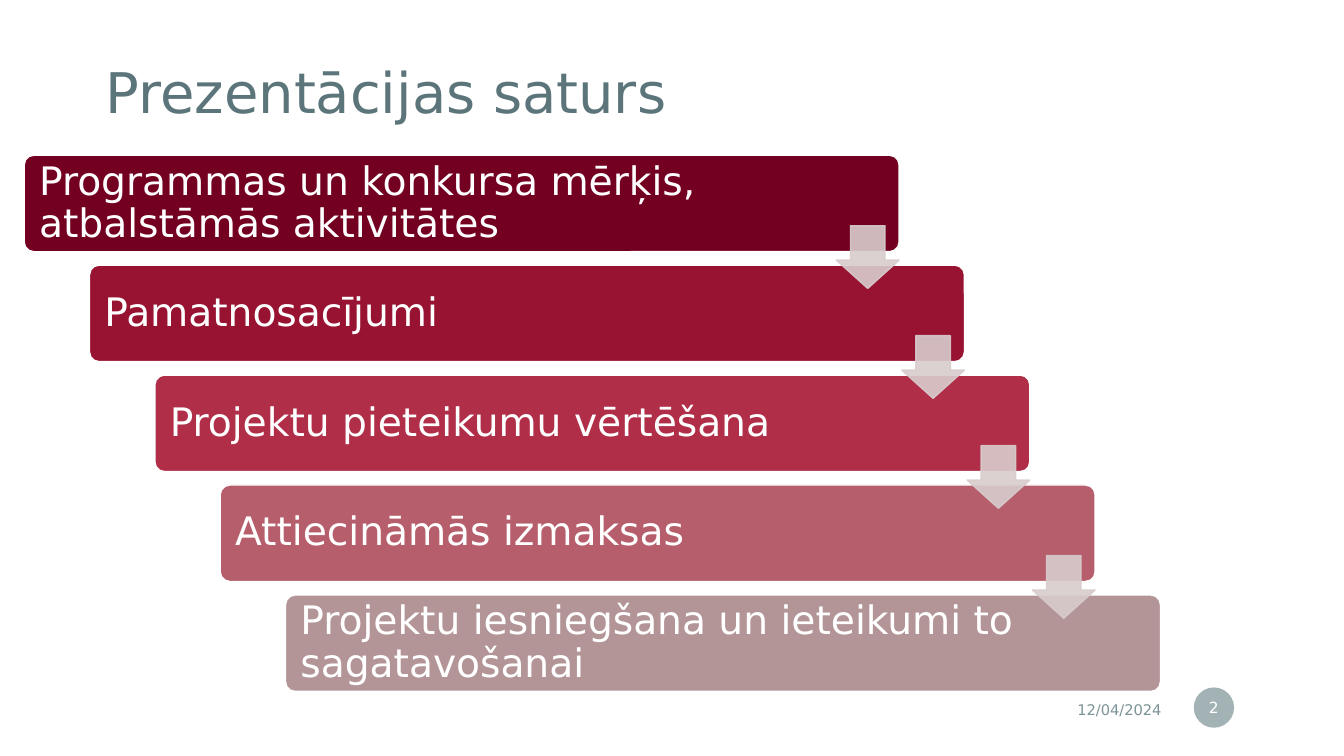
import lxml.etree
import pptx
import pptx.dml.color
import pptx.enum.shapes
import pptx.enum.text
import pptx.oxml.ns
import pptx.util

RGBColor = pptx.dml.color.RGBColor
Shapes = pptx.enum.shapes.MSO_SHAPE
Align = pptx.enum.text.PP_ALIGN
Inches = pptx.util.Inches

WHITE = RGBColor(0xFF, 0xFF, 0xFF)
TITLE_COLOR = RGBColor(0x5B, 0x75, 0x7A)
FOOTER_COLOR = RGBColor(0x7C, 0x93, 0x96)
ARROW_COLOR = RGBColor(0xD8, 0xCC, 0xCD)
FONT = "DejaVu Sans"

STEPS = [
    ("Programmas un konkursa mērķis, atbalstāmās aktivitātes", RGBColor(0x74, 0x00, 0x21)),
    ("Pamatnosacījumi", RGBColor(0x98, 0x12, 0x31)),
    ("Projektu pieteikumu vērtēšana", RGBColor(0xB0, 0x2E, 0x47)),
    ("Attiecināmās izmaksas", RGBColor(0xB6, 0x5E, 0x6B)),
    ("Projektu iesniegšana un ieteikumi to sagatavošanai", RGBColor(0xB3, 0x95, 0x98)),
]


def set_opacity(color_format, percent):
    """Make a solid colour partly transparent."""
    color = color_format._xFill.find(pptx.oxml.ns.qn("a:srgbClr"))
    alpha = lxml.etree.SubElement(color, pptx.oxml.ns.qn("a:alpha"))
    alpha.set("val", str(percent * 1000))


def write_text(shape, text, size, color, align, insets, spacing=1.0):
    """Write one vertically centred paragraph into a shape."""
    frame = shape.text_frame
    frame.word_wrap = True
    frame.auto_size = pptx.enum.text.MSO_AUTO_SIZE.NONE
    frame.vertical_anchor = pptx.enum.text.MSO_ANCHOR.MIDDLE
    frame.margin_left, frame.margin_top, frame.margin_right, frame.margin_bottom = map(Inches, insets)
    para = frame.paragraphs[0]
    para.text = text
    para.alignment = align
    para.line_spacing = spacing
    para.font.name = FONT
    para.font.size = pptx.util.Pt(size)
    para.font.color.rgb = color


def add_filled_shape(page, kind, box, fill, line=None, opacity=100):
    """Add a flat preset shape with a solid fill and an optional outline."""
    shape = page.shapes.add_shape(kind, *map(Inches, box))
    shape.shadow.inherit = False
    fills = [shape.fill]
    if line is None:
        shape.line.fill.background()
    else:
        shape.line.width = pptx.util.Pt(1)
        fills.append(shape.line.fill)
    for part, color in zip(fills, (fill, line)):
        part.solid()
        part.fore_color.rgb = color
        if opacity < 100:
            set_opacity(part.fore_color, opacity)
    return shape


def add_title(page, box):
    """Place the slide title in its placeholder."""
    title = page.shapes.title
    title.left, title.top, title.width, title.height = map(Inches, box)
    write_text(title, "Prezentācijas saturs", 40, TITLE_COLOR, Align.LEFT, [0.2] * 4, 0.9)


def add_staircase(page, box):
    """Draw the stepped bars and the arrows that join them."""
    left, top, width, height = box
    bar_width, bar_height = width * 0.77, height * 0.18
    step_x = (width - bar_width) / (len(STEPS) - 1)
    step_y = (height - bar_height) / (len(STEPS) - 1)
    arrow_size = bar_height * 0.65
    for index, (text, color) in enumerate(STEPS):
        bar_box = (left + index * step_x, top + index * step_y, bar_width, bar_height)
        bar = add_filled_shape(page, Shapes.ROUNDED_RECTANGLE, bar_box, color, WHITE)
        bar.adjustments[0] = 0.1
        write_text(bar, text, 28, WHITE, Align.LEFT, (0.12, 0.03, 1.4, 0.03), 0.9)
    for index in range(len(STEPS) - 1):
        arrow_box = (left + index * step_x + bar_width - arrow_size,
                     top + index * step_y + bar_height * 0.73, arrow_size, arrow_size)
        arrow = add_filled_shape(page, Shapes.DOWN_ARROW, arrow_box, ARROW_COLOR, ARROW_COLOR, 90)
        arrow.adjustments[0] = 0.55
        arrow.adjustments[1] = 0.45


def add_footer(page, box):
    """Place the date and the page number badge at the ends of the box."""
    left, top, width, height = box
    date = page.shapes.add_textbox(*map(Inches, (left, top + 0.04, 3.01, height - 0.05)))
    write_text(date, "12/04/2024", 10.5, FOOTER_COLOR, Align.RIGHT, (0.1, 0.05, 0.1, 0.05))
    badge_box = (left + width - height, top, height, height)
    badge = add_filled_shape(page, Shapes.OVAL, badge_box, FOOTER_COLOR, opacity=70)
    write_text(badge, "2", 11, WHITE, Align.CENTER, (0.02, 0.05, 0.02, 0.05))


def main():
    """Build and save the contents slide."""
    deck = pptx.Presentation()
    deck.slide_width, deck.slide_height = Inches(13.33), Inches(7.5)
    page = deck.slides.add_slide(deck.slide_layouts[5])
    add_title(page, (0.85, 0.35, 8.39, 1.19))
    add_footer(page, (8.61, 6.82, 3.63, 0.4))
    add_staircase(page, (0.24, 1.54, 11.27, 5.32))
    deck.save("out.pptx")


if __name__ == "__main__":
    main()
